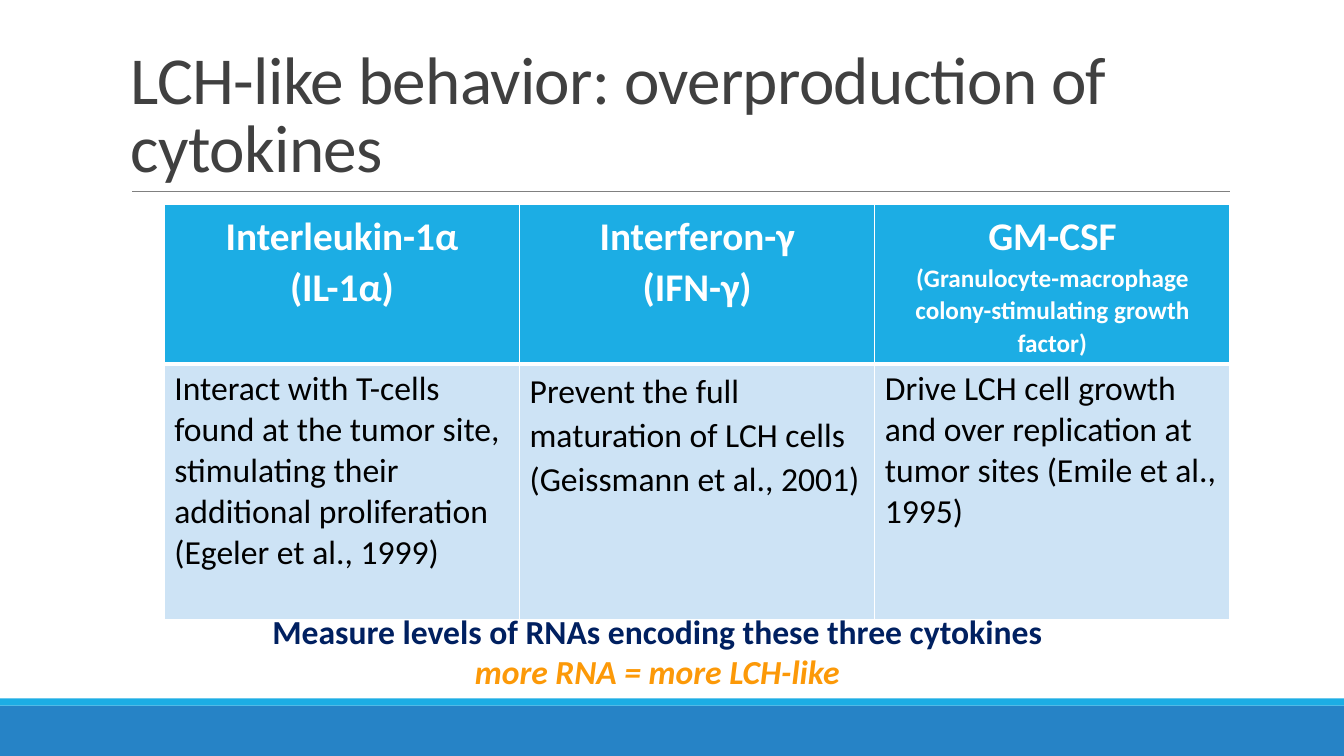
from lxml.etree import SubElement
from pptx import Presentation
from pptx.dml.color import RGBColor
from pptx.enum.shapes import MSO_CONNECTOR, MSO_SHAPE
from pptx.enum.text import MSO_ANCHOR, PP_ALIGN
from pptx.oxml import parse_xml
from pptx.oxml.ns import nsdecls, qn
from pptx.util import Inches, Pt

FONT = "Calibri"
COLORS = {
    "band": "2683C6",
    "accent": "1CADE4",
    "rule": "808080",
    "title": "404040",
    "white": "FFFFFF",
    "body_fill": "CDE3F5",
    "body": "000000",
    "measure": "002060",
    "conclusion": "FC9908",
}
CYTOKINES = [
    (
        [("Interleukin-1α", 28), ("(IL-1α)", 28)],
        "Interact with T-cells found at the tumor site, stimulating their "
        "additional proliferation (Egeler et al., 1999)",
        1,
    ),
    (
        [("Interferon-γ", 28), ("(IFN-γ)", 28)],
        "Prevent the full maturation of LCH cells (Geissmann et al., 2001)",
        1.07,
    ),
    (
        [("GM-CSF", 28), ("(Granulocyte-macrophage colony-stimulating growth factor)", 18)],
        "Drive LCH cell growth and over replication at tumor sites (Emile et al., 1995)",
        1,
    ),
]


def rgb(name):
    return RGBColor.from_string(COLORS[name])


def add_line(frame, text, size, color, first=True, align=PP_ALIGN.LEFT,
             spacing=1, bold=False, italic=False):
    paragraph = frame.paragraphs[0] if first else frame.add_paragraph()
    paragraph.alignment = align
    paragraph.line_spacing = spacing
    run = paragraph.add_run()
    run.text = text
    run.font.name = FONT
    run.font.size = Pt(size)
    run.font.bold = bold
    run.font.italic = italic
    run.font.color.rgb = rgb(color)
    return run


def add_text_area(slide, left, top, width, height, anchor=MSO_ANCHOR.TOP):
    frame = slide.shapes.add_textbox(
        Inches(left), Inches(top), Inches(width), Inches(height)
    ).text_frame
    frame.word_wrap = True
    frame.vertical_anchor = anchor
    return frame


def add_footer_bands(slide, left, top, width, height):
    stripe = 0.07
    for color, y, depth in (
        ("band", top + stripe, height - stripe),
        ("accent", top, stripe),
    ):
        band = slide.shapes.add_shape(
            MSO_SHAPE.RECTANGLE, Inches(left), Inches(y), Inches(width), Inches(depth)
        )
        band.shadow.inherit = False
        band.fill.solid()
        band.fill.fore_color.rgb = rgb(color)
        band.line.fill.background()


def add_heading(slide, left, top, width, height):
    frame = add_text_area(slide, left, top, width, height, MSO_ANCHOR.BOTTOM)
    heading = add_line(
        frame, "LCH-like behavior: overproduction of cytokines", 48, "title", spacing=0.85
    )
    heading.font._element.set("spc", "-50")
    bottom = Inches(top + height)
    rule = slide.shapes.add_connector(
        MSO_CONNECTOR.STRAIGHT, Inches(left + 0.11), bottom, Inches(left + width), bottom
    )
    rule.line.color.rgb = rgb("rule")
    rule.line.width = Pt(0.5)
    SubElement(rule._element.spPr, qn("a:effectLst"))


def style_cell(cell, fill, top_border, bottom_border):
    cell.fill.solid()
    cell.fill.fore_color.rgb = rgb(fill)
    borders = (("lnL", 1), ("lnR", 1), ("lnT", top_border), ("lnB", bottom_border))
    for position, (side, points) in enumerate(borders):
        border = parse_xml(
            f'<a:{side} {nsdecls("a")} w="{Pt(points)}"><a:solidFill>'
            f'<a:srgbClr val="{COLORS["white"]}"/></a:solidFill></a:{side}>'
        )
        cell._tc.get_or_add_tcPr().insert(position, border)


def add_cytokine_table(slide, left, top, width, header_height, body_height):
    table = slide.shapes.add_table(
        2, len(CYTOKINES), Inches(left), Inches(top),
        Inches(width), Inches(header_height + body_height)
    ).table
    table.rows[0].height = Inches(header_height)
    table.rows[1].height = Inches(body_height)
    for column, (names, role, spacing) in enumerate(CYTOKINES):
        header, body = table.cell(0, column), table.cell(1, column)
        style_cell(header, "accent", 1, 3)
        style_cell(body, "body_fill", 3, 1)
        for index, (name, size) in enumerate(names):
            add_line(header.text_frame, name, size, "white", index == 0,
                     PP_ALIGN.CENTER, 1.07, bold=True)
        add_line(body.text_frame, role, 24, "body", spacing=spacing)


def add_takeaway(slide, left, top, width, height):
    frame = add_text_area(slide, left, top, width, height)
    add_line(frame, "Measure levels of RNAs encoding these three cytokines", 24,
             "measure", align=PP_ALIGN.CENTER, bold=True)
    add_line(frame, "more RNA = more LCH-like", 24, "conclusion", False,
             PP_ALIGN.CENTER, bold=True, italic=True)


def main():
    presentation = Presentation()
    presentation.slide_width = Inches(13.33)
    presentation.slide_height = Inches(7.5)
    slide = presentation.slides.add_slide(presentation.slide_layouts[6])
    add_footer_bands(slide, 0, 6.93, 13.33, 0.57)
    add_heading(slide, 1.2, 0.31, 11, 1.59)
    add_cytokine_table(slide, 1.63, 2.03, 10.57, 1.58, 2.54)
    add_takeaway(slide, 2.44, 6.01, 8.16, 1.21)
    presentation.save("out.pptx")


if __name__ == "__main__":
    main()
